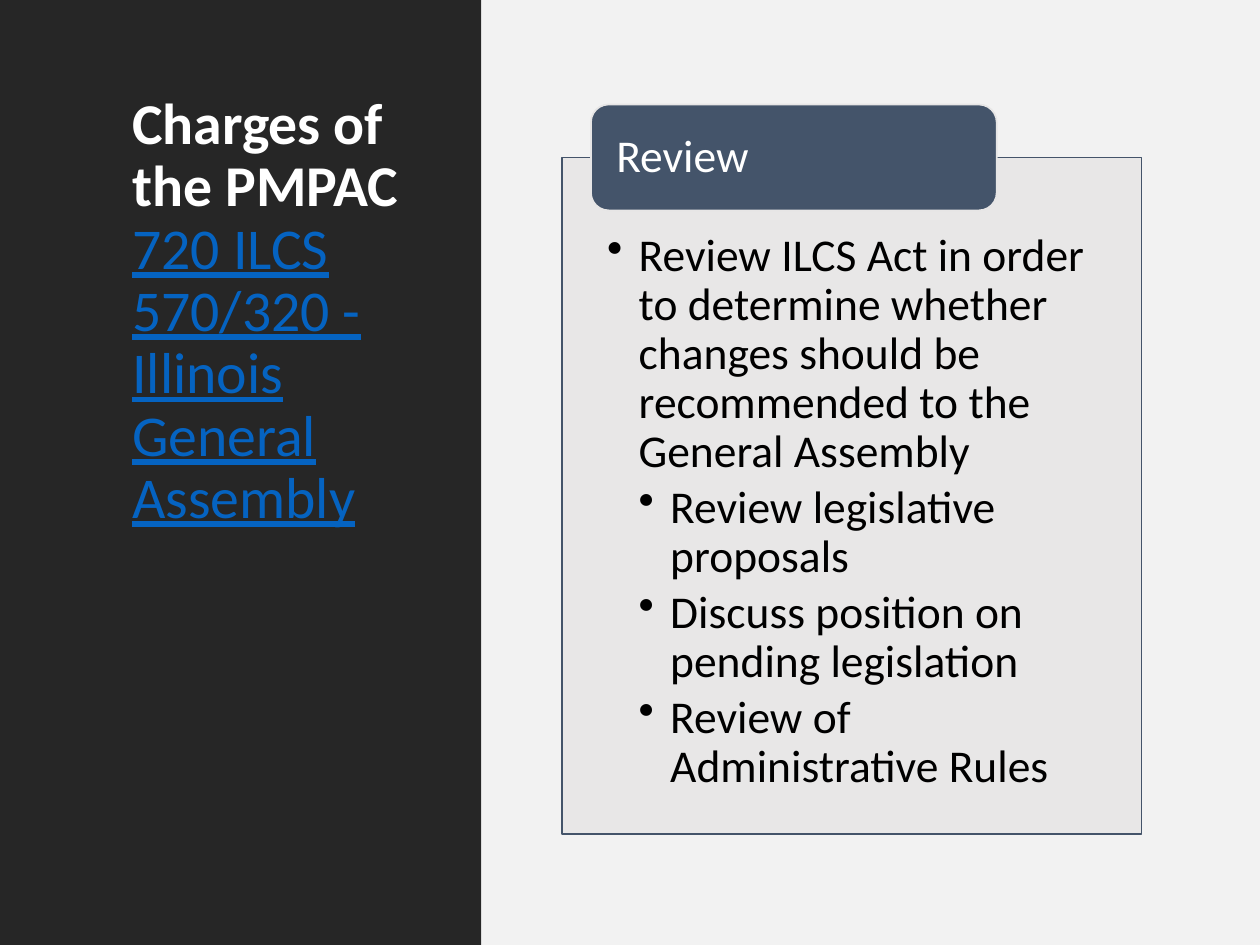
from pptx import Presentation
from pptx import util as u
from pptx.dml.color import RGBColor
from pptx.enum import shapes, text
from pptx.oxml.ns import qn
from lxml import etree

CHARCOAL = RGBColor(0x26, 0x26, 0x26)
PALE = RGBColor(0xF2, 0xF2, 0xF2)
GREY = RGBColor(0xE7, 0xE6, 0xE6)
SLATE = RGBColor(0x44, 0x54, 0x6A)
LINK_BLUE = RGBColor(0x05, 0x63, 0xC1)
WHITE = RGBColor(0xFF, 0xFF, 0xFF)
BLACK = RGBColor(0, 0, 0)

CHARGES = [
    (1, "Review ILCS Act in order to determine whether changes should be "
        "recommended to the General Assembly"),
    (2, "Review legislative proposals"),
    (2, "Discuss position on pending legislation"),
    (2, "Review of Administrative Rules"),
]


class SlideBuilder:
    font_name = "Calibri"
    body_size = 26
    title_size = 33
    line_spacing = 0.9
    indent = 0.25

    def __init__(self, presentation):
        self.slide = presentation.slides.add_slide(presentation.slide_layouts[5])

    def box(self, kind, position, fill, line=None, opacity=None):
        shape = self.slide.shapes.add_shape(kind, *map(u.Inches, position))
        shape.shadow.inherit = False
        shape.fill.solid()
        shape.fill.fore_color.rgb = fill
        if opacity is not None:
            color = shape._element.spPr.find(qn("a:solidFill"))[0]
            etree.SubElement(color, qn("a:alpha"), val=str(opacity * 1000))
        if line is None:
            shape.line.fill.background()
        else:
            shape.line.color.rgb = line
            shape.line.width = u.Pt(1)
        return shape

    def frame(self, shape, insets, anchor):
        frame = shape.text_frame
        frame.word_wrap = True
        frame.auto_size = text.MSO_AUTO_SIZE.NONE
        frame.vertical_anchor = anchor
        (frame.margin_left, frame.margin_top,
         frame.margin_right, frame.margin_bottom) = map(u.Inches, insets)
        return frame

    def style(self, paragraph, size, color):
        paragraph.alignment = text.PP_ALIGN.LEFT
        paragraph.line_spacing = self.line_spacing
        paragraph.font.name = self.font_name
        paragraph.font.size = u.Pt(size)
        paragraph.font.color.rgb = color

    def title(self, position, heading, citation):
        title = self.slide.shapes.title
        title.left, title.top, title.width, title.height = map(u.Inches, position)
        self.slide.shapes._spTree.append(title._element)
        frame = self.frame(title, (0.1, 0.05, 0.1, 0.05), text.MSO_ANCHOR.TOP)
        paragraph = frame.paragraphs[0]
        self.style(paragraph, self.title_size, WHITE)
        run = paragraph.add_run()
        run.text = heading
        run.font.bold = True
        paragraph.add_line_break()
        run = paragraph.add_run()
        run.text = citation
        run.font.underline = True
        run.font.color.rgb = LINK_BLUE

    def label(self, shape, words):
        frame = self.frame(shape, (0.16, 0, 0.16, 0), text.MSO_ANCHOR.MIDDLE)
        frame.text = words
        self.style(frame.paragraphs[0], self.body_size, WHITE)

    def bullets(self, shape, items):
        frame = self.frame(shape, (0.36, 0.59, 0.36, 0.2), text.MSO_ANCHOR.TOP)
        for index, (level, words) in enumerate(items):
            paragraph = frame.add_paragraph() if index else frame.paragraphs[0]
            paragraph.text = words
            paragraph.level = level
            self.style(paragraph, self.body_size, BLACK)
            paragraph.space_after = u.Pt(0.15 * self.body_size)
            properties = paragraph._p.get_or_add_pPr()
            properties.set("marL", str(u.Inches(level * self.indent)))
            properties.set("indent", str(-u.Inches(self.indent)))
            bullet = etree.Element(qn("a:buChar"), char="•")
            properties.find(qn("a:defRPr")).addprevious(bullet)


def main():
    presentation = Presentation()
    presentation.slide_width = u.Inches(10)
    presentation.slide_height = u.Inches(7.5)
    builder = SlideBuilder(presentation)
    rectangle = shapes.MSO_SHAPE.RECTANGLE
    rounded = shapes.MSO_SHAPE.ROUNDED_RECTANGLE

    builder.box(rectangle, (0, 0, 3.82, 7.5), CHARCOAL)
    builder.title((0.95, 0.7, 2.38, 6.1), "Charges of the PMPAC",
                  "720 ILCS 570/320 - Illinois General Assembly")
    builder.box(rectangle, (3.82, 0, 6.18, 7.5), PALE)
    panel = builder.box(rectangle, (4.46, 1.25, 4.6, 5.37), GREY, SLATE, opacity=90)
    builder.bullets(panel, CHARGES)
    tab = builder.box(rounded, (4.69, 0.83, 3.22, 0.84), SLATE, GREY)
    builder.label(tab, "Review")

    presentation.save("out.pptx")


if __name__ == "__main__":
    main()
